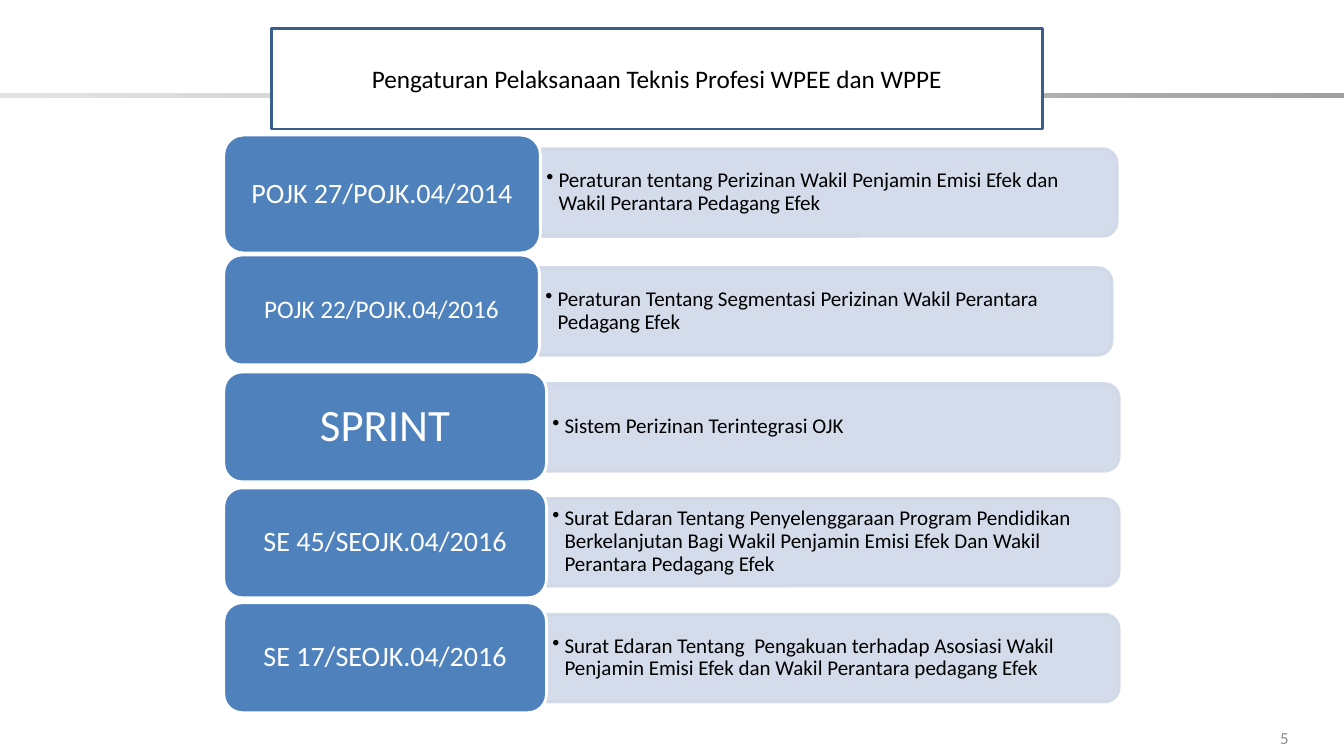
from copy import deepcopy

from lxml import etree
from pptx import Presentation
from pptx import util as u
from pptx.dml.color import RGBColor
from pptx.enum import shapes, text
from pptx.oxml.ns import qn

PX = 9144  # one px is a hundredth of an inch
FONT = "Calibri"
COLORS = {
    "label": "4F81BD", "band": "D0D8E8", "frame": "3A5F8C",
    "white": "FFFFFF", "black": "000000", "page": "8C8C8C",
    "light": "E3E3E3", "mid": "C5C5C5", "dark": "A0A0A0",
}
LEFT = 222   # left edge of all labels
BAND = 87    # thickness of the bands
# label top, width, height; band middle, length; label size; label, detail
ROWS = [
    (134, 314, 117, 191, 572, 20, "POJK 27/POJK.04/2014",
     "Peraturan tentang Perizinan Wakil Penjamin Emisi Efek dan Wakil Perantara Pedagang Efek"),
    (253, 313, 109, 309, 568, 18, "POJK 22/POJK.04/2016",
     "Peraturan Tentang Segmentasi Perizinan Wakil Perantara Pedagang Efek"),
    (369, 320, 109, 424, 568, 32, "SPRINT",
     "Sistem Perizinan Terintegrasi OJK"),
    (484, 320, 109, 538, 568, 20, "SE 45/SEOJK.04/2016",
     "Surat Edaran Tentang Penyelenggaraan Program Pendidikan Berkelanjutan "
     "Bagi Wakil Penjamin Emisi Efek Dan Wakil Perantara Pedagang Efek"),
    (598, 320, 109, 653, 568, 20, "SE 17/SEOJK.04/2016",
     "Surat Edaran Tentang  Pengakuan terhadap Asosiasi Wakil Penjamin Emisi Efek "
     "dan Wakil Perantara pedagang Efek"),
]


def rgb(name):
    return RGBColor.from_string(COLORS[name])


def px(*vals):
    return [round(v * PX) for v in vals]


def paint(shape, fill, line=None):
    shape.fill.solid()
    shape.fill.fore_color.rgb = rgb(fill)
    if line:
        shape.line.color.rgb = rgb(line)
        shape.line.width = u.Pt(2)


def add(slide, kind, box):
    shape = slide.shapes.add_shape(kind, *px(*box))
    shape.shadow.inherit = False
    return shape


def write(shape, words, size, color, align=text.PP_ALIGN.CENTER, pad=(10, 5), space=None):
    frame = shape.text_frame
    frame.text = words
    frame.word_wrap = True
    frame.vertical_anchor = text.MSO_ANCHOR.MIDDLE
    frame.margin_left = frame.margin_right = pad[0] * PX
    frame.margin_top = frame.margin_bottom = pad[1] * PX
    para = frame.paragraphs[0]
    para.alignment = align
    if space:
        para.line_spacing = space
    font = para.runs[0].font
    font.name, font.size = FONT, u.Pt(size)
    font.color.rgb = rgb(color)
    return para


def bullet(para, indent):
    props = para._p.get_or_add_pPr()
    props.set("marL", str(indent * PX))
    props.set("indent", str(-indent * PX))
    etree.SubElement(props, qn("a:buChar")).set("char", "•")


def add_rule(slide):
    bar = add(slide, shapes.MSO_SHAPE.RECTANGLE, (0, 92, 1333, 5))
    bar.line.fill.background()
    bar.fill.gradient()
    bar.fill.gradient_angle = 0
    first = bar.fill._fill._gradFill.gsLst[0]
    first.addnext(deepcopy(first))
    for i, (stop, name) in enumerate(zip(bar.fill.gradient_stops, ("light", "mid", "dark"))):
        stop.position = i / 2
        stop.color.rgb = rgb(name)


def add_band(slide, left, mid, length, words):
    # The upright shape is turned so that its round corners face right
    band = add(slide, shapes.MSO_SHAPE.ROUND_2_SAME_RECTANGLE,
               (left + (length - BAND) / 2, mid - length / 2, BAND, length))
    band.rotation = 90
    paint(band, "band", "band")
    for color in band._element.spPr.iter(qn("a:srgbClr")):
        etree.SubElement(color, qn("a:alpha")).set("val", "90000")
    box = slide.shapes.add_textbox(*px(left, mid - 40, length - 5, 79))
    para = write(box, words, 15, "black", text.PP_ALIGN.LEFT, (6, 3), 0.9)
    bullet(para, 12)


def add_label(slide, box, words, size):
    label = add(slide, shapes.MSO_SHAPE.ROUNDED_RECTANGLE, box)
    paint(label, "label", "white")
    write(label, words, size, "white", pad=(8, 4), space=0.9)


def add_page(slide, number):
    box = slide.shapes.add_textbox(*px(1246, 714, 56, 36))
    paint(box, "white")
    write(box, number, 12, "page")


def set_title(slide, words):
    title = slide.shapes.title
    title.left, title.top, title.width, title.height = px(269, 28, 765, 100)
    paint(title, "white", "frame")
    write(title, words, 18, "black")
    slide.shapes._spTree.append(title._element)  # bring in front of the rule


def main():
    deck = Presentation()
    deck.slide_width, deck.slide_height = px(1333, 750)
    slide = deck.slides.add_slide(deck.slide_layouts[5])

    add_rule(slide)

    # Regulations: a label with its band
    for top, wide, high, mid, length, size, name, detail in ROWS:
        add_band(slide, LEFT + wide, mid, length, detail)
        add_label(slide, (LEFT, top, wide, high), name, size)

    # Page number and title
    add_page(slide, "5")
    set_title(slide, "Pengaturan Pelaksanaan Teknis Profesi WPEE dan WPPE")
    deck.save("out.pptx")


if __name__ == "__main__":
    main()
